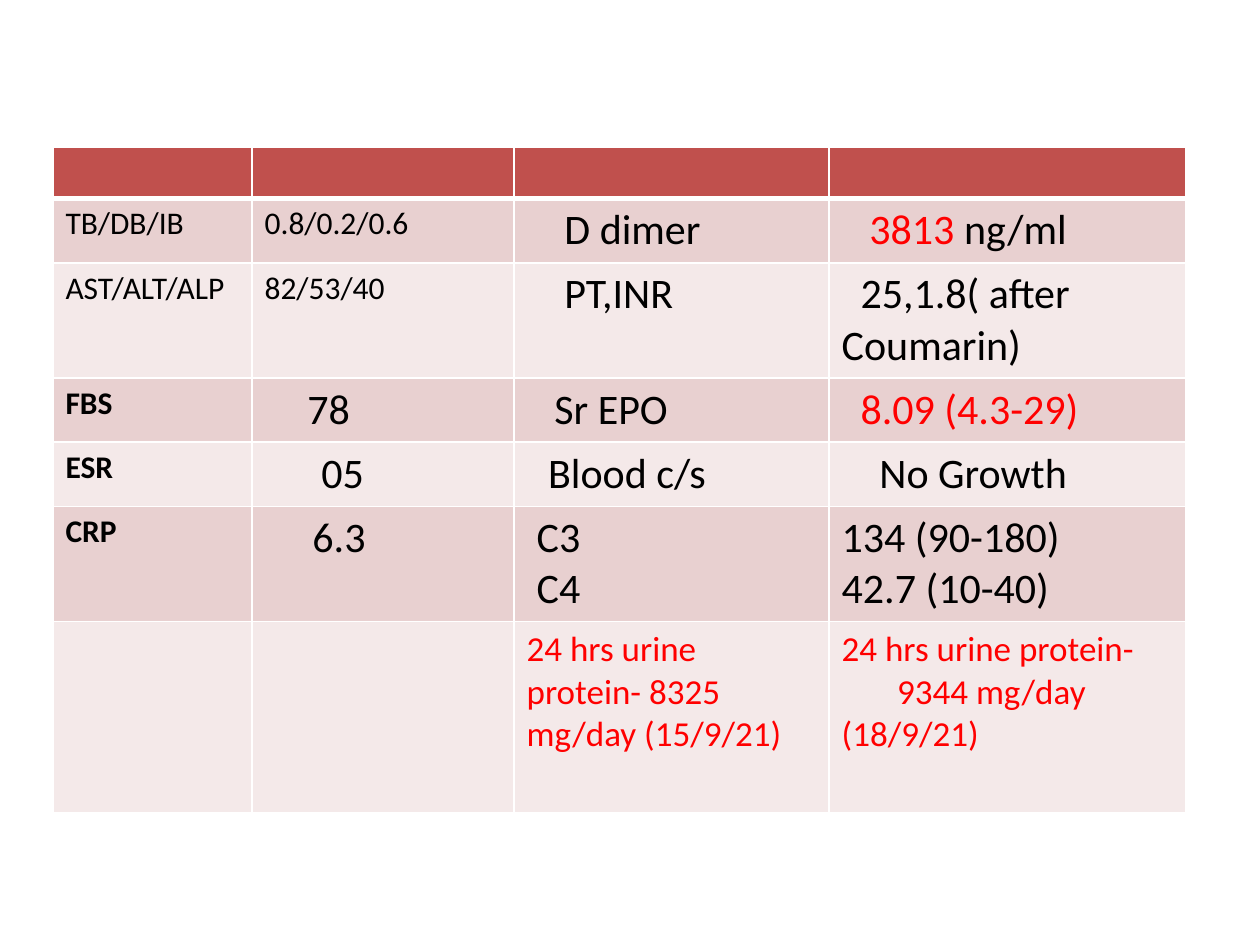
from lxml.etree import SubElement
from pptx import Presentation
from pptx.dml.color import RGBColor
from pptx.oxml.ns import qn
from pptx.util import Inches, Pt

BLACK, RED, WHITE = "000000", "FF0000", "FFFFFF"
HEADER_FILL, BAND_FILLS = "C0504D", ("E8D0D0", "F4E9E9")

LEFT, TOP = 0.42, 1.17
COLUMN_WIDTHS = [1.58, 2.08, 2.5, 2.83]
ROW_HEIGHTS = [0.4, 0.51, 0.91, 0.51, 0.51, 0.91, 1.52]


def line(text, size=24, color=BLACK, bold=False, indent=0):
    """One paragraph holding a single run."""
    return indent, [(text, size, color, bold)]


# Each cell is a list of paragraphs: (first-line indent, runs)
ROWS = [
    [[], [], [], []],
    [[line("TB/DB/IB", 18)], [line("0.8/0.2/0.6", 18)],
     [line("D dimer", indent=0.3)],
     [(0.22, [("3813 ", 24, RED, False), ("ng/ml", 24, BLACK, False)])]],
    [[line("AST/ALT/ALP", 18)], [line("82/53/40", 18)],
     [line("PT,INR", indent=0.3)],
     [line("25,1.8( after Coumarin)", indent=0.15)]],
    [[line("FBS", 18, bold=True)], [line("78", indent=0.34)],
     [line("Sr EPO", indent=0.22)],
     [line("8.09 (4.3-29)", color=RED, indent=0.15)]],
    [[line("ESR", 18, bold=True)], [line("05", indent=0.45)],
     [line("Blood c/s", indent=0.17)],
     [line("No Growth", indent=0.3)]],
    [[line("CRP", 18, bold=True)], [line("6.3", indent=0.38)],
     [line("C3", indent=0.08), line("C4", indent=0.08)],
     [line("134 (90-180)"), line("42.7 (10-40)")]],
    [[], [],
     [line("24 hrs urine protein- 8325 mg/day (15/9/21)", 20, RED)],
     [line("24 hrs urine protein-", 20, RED),
      line("9344 mg/day (18/9/21)", 20, RED, indent=0.44)]],
]


def rgb(value):
    return RGBColor.from_string(value)


def set_borders(cell, widths):
    """Draw white cell borders; widths maps L, R, T, B to points."""
    properties = cell._tc.get_or_add_tcPr()
    for side, width in widths.items():
        border = SubElement(properties, qn(f"a:ln{side}"), w=str(Pt(width)))
        fill = SubElement(border, qn("a:solidFill"))
        SubElement(fill, qn("a:srgbClr"), val=WHITE)


def write_paragraphs(text_frame, paragraphs):
    for number, (indent, runs) in enumerate(paragraphs):
        paragraph = text_frame.add_paragraph() if number else text_frame.paragraphs[0]
        if indent:
            properties = paragraph._p.get_or_add_pPr()
            properties.set("marL", "0")
            properties.set("indent", str(Inches(indent)))
        for text, size, color, bold in runs:
            run = paragraph.add_run()
            run.text = text
            run.font.name = "Calibri"
            run.font.size = Pt(size)
            run.font.bold = bold
            run.font.color.rgb = rgb(color)


presentation = Presentation()
presentation.slide_width, presentation.slide_height = Inches(10), Inches(7.5)
slide = presentation.slides.add_slide(presentation.slide_layouts[6])

table = slide.shapes.add_table(
    len(ROWS), len(COLUMN_WIDTHS), Inches(LEFT), Inches(TOP),
    Inches(sum(COLUMN_WIDTHS)), Inches(sum(ROW_HEIGHTS))).table
for column, width in zip(table.columns, COLUMN_WIDTHS):
    column.width = Inches(width)
for row, height in zip(table.rows, ROW_HEIGHTS):
    row.height = Inches(height)

for row_number, cells in enumerate(ROWS):
    fill_color = BAND_FILLS[(row_number - 1) % 2] if row_number else HEADER_FILL
    widths = {"L": 1, "R": 1,
              "T": 3 if row_number == 1 else 1,
              "B": 3 if row_number == 0 else 1}
    for column_number, paragraphs in enumerate(cells):
        cell = table.cell(row_number, column_number)
        set_borders(cell, widths)
        cell.fill.solid()
        cell.fill.fore_color.rgb = rgb(fill_color)
        write_paragraphs(cell.text_frame, paragraphs)

presentation.save("out.pptx")
